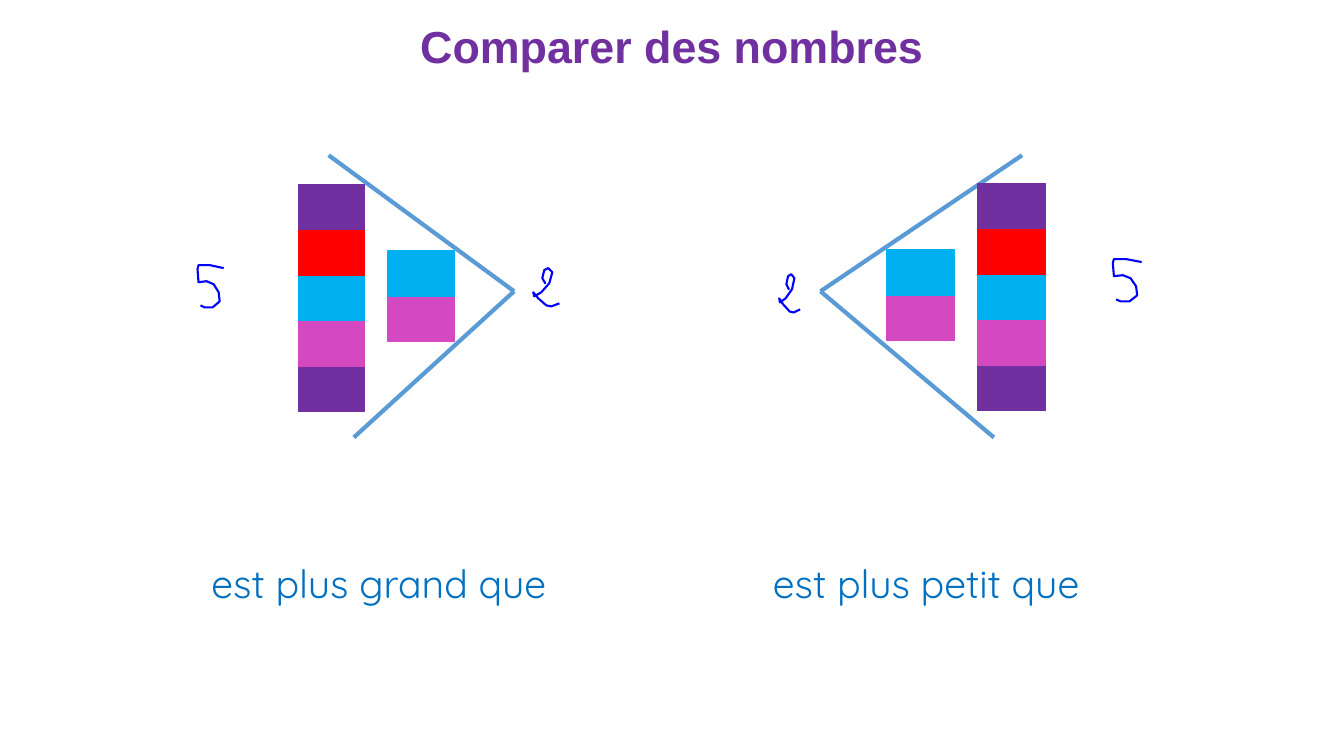
from dataclasses import dataclass

from pptx import Presentation
from pptx.dml.color import RGBColor
from pptx.enum.shapes import MSO_CONNECTOR, MSO_SHAPE
from pptx.enum.text import MSO_ANCHOR, MSO_AUTO_SIZE, PP_ALIGN
from pptx.oxml.ns import qn
from pptx.shapes.base import BaseShape
from pptx.slide import Slide
from pptx.util import Emu, Inches, Pt
from lxml import etree

STRAIGHT = MSO_CONNECTOR.STRAIGHT
RECTANGLE = MSO_SHAPE.RECTANGLE
MIDDLE, TOP = MSO_ANCHOR.MIDDLE, MSO_ANCHOR.TOP
CENTER, LEFT = PP_ALIGN.CENTER, PP_ALIGN.LEFT
GROW, FIXED = MSO_AUTO_SIZE.SHAPE_TO_FIT_TEXT, MSO_AUTO_SIZE.NONE

# Grid of square cells, 0.1 inch wide; pen strokes use hundredths of an inch
COLUMNS, ROWS = 133.33, 75
CELL = Inches(0.1)
PEN_UNIT = Inches(0.01)
BLOCK_HEIGHT = 4.5
SIGN_TOP, SIGN_MIDDLE, SIGN_BOTTOM = 15.4, 28.9, 43.4


@dataclass(frozen=True)
class Theme:
    purple: str = "7030A0"
    red: str = "FF0000"
    cyan: str = "00B0F0"
    pink: str = "D549C0"
    sign: str = "5B9BD5"
    caption: str = "0070C0"
    ink: str = "0000FF"
    title_font: str = "Arial"
    caption_font: str = "Quicksand"
    title_size: float = 32
    caption_size: float = 28
    sign_width: float = 3
    block_width: float = 1
    ink_width: float = 1.5


THEME = Theme()


@dataclass(frozen=True)
class Label:
    text: str
    left: float
    top: float
    width: float
    height: float
    title: bool = False


@dataclass(frozen=True)
class Sign:
    apex: float
    upper_end: float
    lower_end: float


@dataclass(frozen=True)
class Tower:
    left: float
    top: float
    colors: tuple[str, ...]  # from top to bottom
    width: float = 6.7


@dataclass(frozen=True)
class Digit:
    left: float
    top: float
    stroke: tuple[tuple[int, int], ...]
    stretch: float = 1


LABELS = (
    Label("Comparer des nombres", 0, 0.2, COLUMNS, 9.3, title=True),
    Label("est plus grand que", 20, 55, 39.3, 5.7),
    Label("est plus petit que", 75.7, 55, 35.4, 5.7),
)

SIGNS = (Sign(81.4, 101.4, 98.6), Sign(51, 32.6, 35.1))

FIVE_BLOCKS = (THEME.purple, THEME.red, THEME.cyan, THEME.pink, THEME.purple)
TWO_BLOCKS = (THEME.cyan, THEME.pink)
TOWERS = (
    Tower(97, 18.2, FIVE_BLOCKS),
    Tower(88, 24.8, TWO_BLOCKS),
    Tower(29.6, 18.3, FIVE_BLOCKS, 6.6),
    Tower(38.5, 24.9, TWO_BLOCKS, 6.6),
)

# Handwritten digits: one pen stroke each
FIVE = ((26, 4), (12, 1), (1, 1), (0, 5), (1, 18), (9, 17), (16, 20),
        (21, 28), (22, 37), (15, 43), (7, 43), (3, 41))
TWO = ((11, 13), (12, 15), (9, 10), (11, 2), (15, 0), (19, 4), (16, 15),
       (8, 24), (1, 28), (0, 24), (5, 30), (13, 37), (18, 38), (26, 35))
DIGITS = (
    Digit(19.6, 26.2, FIVE),
    Digit(52.9, 26.6, TWO),
    Digit(77.3, 27.2, TWO, 0.8),
    Digit(110.4, 25.6, FIVE, 1.1),
)


def cells(*counts: float) -> list[Emu]:
    return [Emu(round(count * CELL)) for count in counts]


def set_line(shape: BaseShape, color: str, width: float) -> None:
    shape.line.color.rgb = RGBColor.from_string(color)
    shape.line.width = Pt(width)


def draw_label(slide: Slide, label: Label) -> None:
    box = slide.shapes.add_textbox(
        *cells(label.left, label.top, label.width, label.height))
    frame = box.text_frame
    frame.text = label.text
    frame.word_wrap = True
    frame.auto_size = FIXED if label.title else GROW
    frame.vertical_anchor = MIDDLE if label.title else TOP
    paragraph = frame.paragraphs[0]
    paragraph.alignment = CENTER if label.title else LEFT
    paragraph.line_spacing = 0.9 if label.title else 1.0
    font = paragraph.runs[0].font
    font.name = THEME.title_font if label.title else THEME.caption_font
    font.size = Pt(THEME.title_size if label.title else THEME.caption_size)
    font.bold = label.title
    color = THEME.purple if label.title else THEME.caption
    font.color.rgb = RGBColor.from_string(color)


def draw_sign(slide: Slide, sign: Sign) -> None:
    ends = ((sign.upper_end, SIGN_TOP), (sign.lower_end, SIGN_BOTTOM))
    for end in ends:
        arm = slide.shapes.add_connector(
            STRAIGHT, *cells(*end, sign.apex, SIGN_MIDDLE))
        set_line(arm, THEME.sign, THEME.sign_width)
        etree.SubElement(arm._element.spPr, qn("a:effectLst"))


def draw_tower(slide: Slide, tower: Tower) -> None:
    # Lower blocks first, so each block overlaps the one below it
    for index, color in reversed(list(enumerate(tower.colors))):
        top = tower.top + index * BLOCK_HEIGHT
        block = slide.shapes.add_shape(
            RECTANGLE, *cells(tower.left, top, tower.width, BLOCK_HEIGHT))
        block.shadow.inherit = False
        block.fill.solid()
        block.fill.fore_color.rgb = RGBColor.from_string(color)
        set_line(block, color, THEME.block_width)


def draw_digit(slide: Slide, digit: Digit) -> None:
    start, *rest = digit.stroke
    scale = (PEN_UNIT * digit.stretch, float(PEN_UNIT))
    builder = slide.shapes.build_freeform(*start, scale=scale)
    builder.add_line_segments(rest, close=False)
    stroke = builder.convert_to_shape(*cells(digit.left, digit.top))
    stroke.shadow.inherit = False
    stroke.fill.background()
    set_line(stroke, THEME.ink, THEME.ink_width)


def main() -> None:
    presentation = Presentation()
    presentation.slide_width, presentation.slide_height = cells(COLUMNS, ROWS)
    slide = presentation.slides.add_slide(presentation.slide_layouts[6])
    for sign in SIGNS:
        draw_sign(slide, sign)
    for label in LABELS:
        draw_label(slide, label)
    for tower in TOWERS:
        draw_tower(slide, tower)
    for digit in DIGITS:
        draw_digit(slide, digit)
    presentation.save("out.pptx")


if __name__ == "__main__":
    main()
